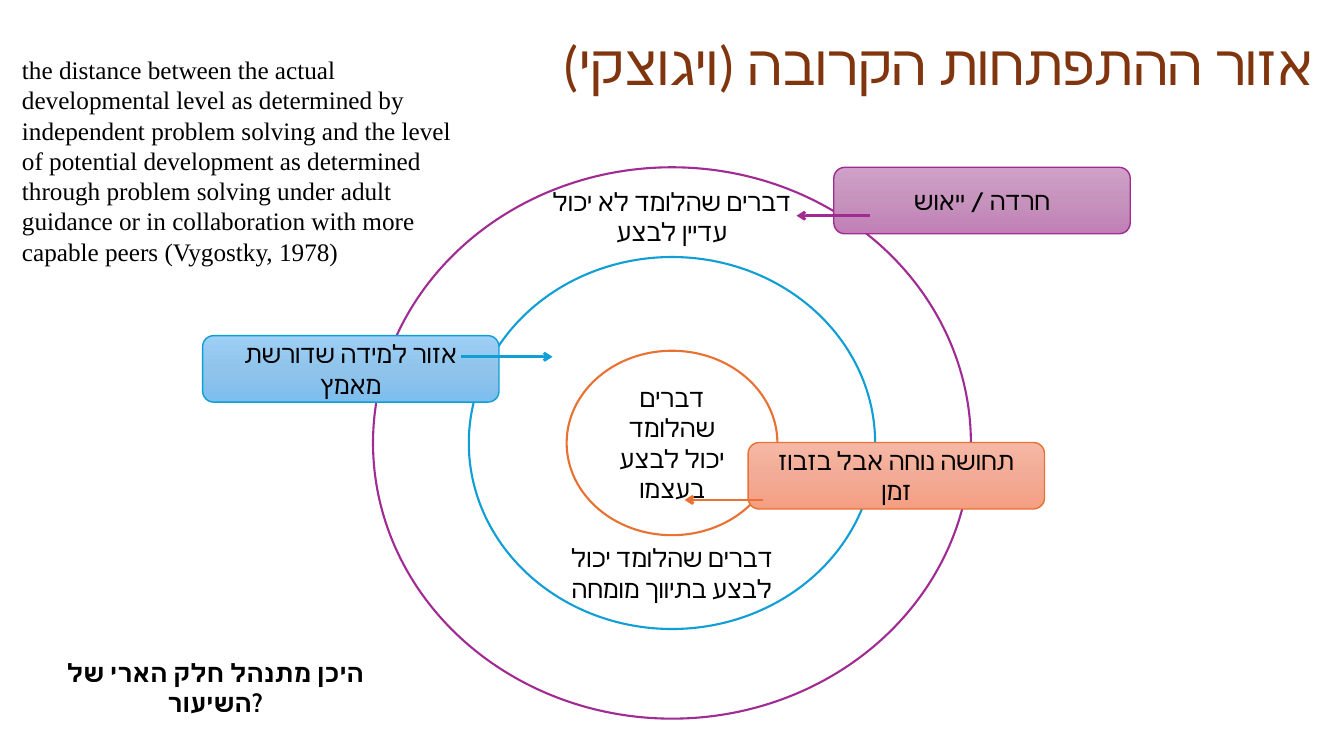
from lxml import etree
from pptx import Presentation
from pptx.dml.color import RGBColor
from pptx.enum.shapes import MSO_CONNECTOR, MSO_SHAPE
from pptx.enum.text import MSO_ANCHOR, PP_ALIGN
from pptx.oxml.ns import qn
from pptx.util import Inches, Pt

ELLIPSE, ROUNDED = MSO_SHAPE.OVAL, MSO_SHAPE.ROUNDED_RECTANGLE
STRAIGHT = MSO_CONNECTOR.STRAIGHT
LEFT, CENTER, RIGHT = PP_ALIGN.LEFT, PP_ALIGN.CENTER, PP_ALIGN.RIGHT
MIDDLE = MSO_ANCHOR.MIDDLE

# Content
WIDTH, HEIGHT = 13.33, 7.5
PURPLE, BLUE, ORANGE = "A02B93", "0F9ED5", "E97132"
TITLE = "אזור ההתפתחות הקרובה (ויגוצקי)"
QUOTE = ("the distance between the actual developmental level as determined by "
         "independent problem solving and the level of potential development as "
         "determined through problem solving under adult guidance or in "
         "collaboration with more capable peers (Vygostky, 1978)")
QUESTION = "היכן מתנהל חלק הארי של השיעור?"

# Concentric zones, outermost first: width, height, line colour, text
RING_CENTER = (WIDTH / 2, 4.395)
RINGS = [
    (5.93, 5.47, PURPLE, ""),
    (4.03, 3.69, BLUE, ""),
    (2.09, 1.83, ORANGE, "דברים שהלומד יכול לבצע בעצמו"),
]
# Captions inside the zones: top, text
CAPTION_SIZE = (2.9, 0.83)
CAPTIONS = [
    (5.27, "דברים שהלומד יכול לבצע בתיווך מומחה"),
    (1.73, "דברים שהלומד לא יכול עדיין לבצע"),
]
# Feelings: left, top, line colour, gradient, text
FEELING_SIZE = (2.94, 0.66)
FEELINGS = [
    (8.27, 1.66, PURPLE, ("D0A0C8", "C693BD", "C17FB6"), "חרדה / ייאוש"),
    (7.42, 4.39, ORANGE, ("F5B8A5", "F2AB96", "F59E82"), "תחושה נוחה אבל בזבוז זמן"),
    (2.01, 3.33, BLUE, ("9ECFF5", "90C4EB", "7CBEED"), "אזור למידה שדורשת מאמץ"),
]
# Arrows: start x, end x, y, colour
ARROWS = [(8.63, 7.9, 2.14, PURPLE), (4.57, 5.48, 3.54, BLUE), (7.57, 6.79, 4.96, ORANGE)]


def color(value):
    return RGBColor.from_string(value)


def write(box, text, size=18, font="Cabin", ink="000000", bold=False,
          align=CENTER, rtl=False, spacing=None):
    frame = box.text_frame
    frame.word_wrap = True
    frame.vertical_anchor = MIDDLE
    para = frame.paragraphs[0]
    para.alignment = align
    if spacing:
        para.line_spacing = spacing
    if rtl:
        para._p.get_or_add_pPr().set("rtl", "1")
    span = para.add_run()
    span.text = text
    span.font.size, span.font.name, span.font.bold = Pt(size), font, bold
    span.font.color.rgb = color(ink)
    # Hebrew letters take the complex-script font
    etree.SubElement(span._r.get_or_add_rPr(), qn("a:cs")).set("typeface", font)


def add_gradient(box, stops):
    box.fill.gradient()
    box.fill.gradient_angle = 270
    stop_list = box._element.spPr.find(".//" + qn("a:gsLst"))
    for old in list(stop_list):
        stop_list.remove(old)
    for index, value in enumerate(stops):
        stop = etree.SubElement(stop_list, qn("a:gs"))
        stop.set("pos", str(index * 100000 // (len(stops) - 1)))
        etree.SubElement(stop, qn("a:srgbClr")).set("val", value)


def add_box(kind, left, top, width, height, fill=None, line=None, weight=1):
    box = page.shapes.add_shape(kind, *map(Inches, (left, top, width, height)))
    box.shadow.inherit = False
    if isinstance(fill, tuple):
        add_gradient(box, fill)
    elif fill:
        box.fill.solid()
        box.fill.fore_color.rgb = color(fill)
    else:
        box.fill.background()
    if line:
        box.line.color.rgb = color(line)
        box.line.width = Pt(weight)
    else:
        box.line.fill.background()
    return box


def add_text(text, left, top, width, height, **style):
    box = page.shapes.add_textbox(*map(Inches, (left, top, width, height)))
    write(box, text, **style)


def add_arrow(start, end, y, ink):
    arrow = page.shapes.add_connector(STRAIGHT, *map(Inches, (start, y, end, y)))
    arrow.line.color.rgb = color(ink)
    arrow.line.width = Pt(2)
    etree.SubElement(arrow.line._get_or_add_ln(), qn("a:tailEnd")).set("type", "arrow")
    etree.SubElement(arrow._element.spPr, qn("a:effectLst"))


deck = Presentation()
deck.slide_width, deck.slide_height = Inches(WIDTH), Inches(HEIGHT)
page = deck.slides.add_slide(deck.slide_layouts[6])

# Title
add_text(TITLE, 1.63, 0.24, 11.5, 0.86, size=40, font="Calibri", ink="80350E",
         align=RIGHT, rtl=True, spacing=0.9)

# Zones and their captions
center_x, center_y = RING_CENTER
for width, height, ink, text in RINGS:
    ring = add_box(ELLIPSE, center_x - width / 2, center_y - height / 2,
                   width, height, fill="FFFFFF", line=ink, weight=1.5)
    if text:
        write(ring, text)
for top, text in CAPTIONS:
    caption = add_box(ROUNDED, center_x - CAPTION_SIZE[0] / 2, top, *CAPTION_SIZE)
    write(caption, text, rtl=True)

# Feelings and arrows
for left, top, ink, stops, text in FEELINGS:
    write(add_box(ROUNDED, left, top, *FEELING_SIZE, fill=stops, line=ink), text)
for arrow_row in ARROWS:
    add_arrow(*arrow_row)

# Question and quotation
write(add_box(ROUNDED, 0.12, 6.24, 4.03, 1.16), QUESTION, bold=True)
add_text(QUOTE, 0.12, 0.4, 4.53, 2.38, font="Times New Roman", align=LEFT)

deck.save("out.pptx")
